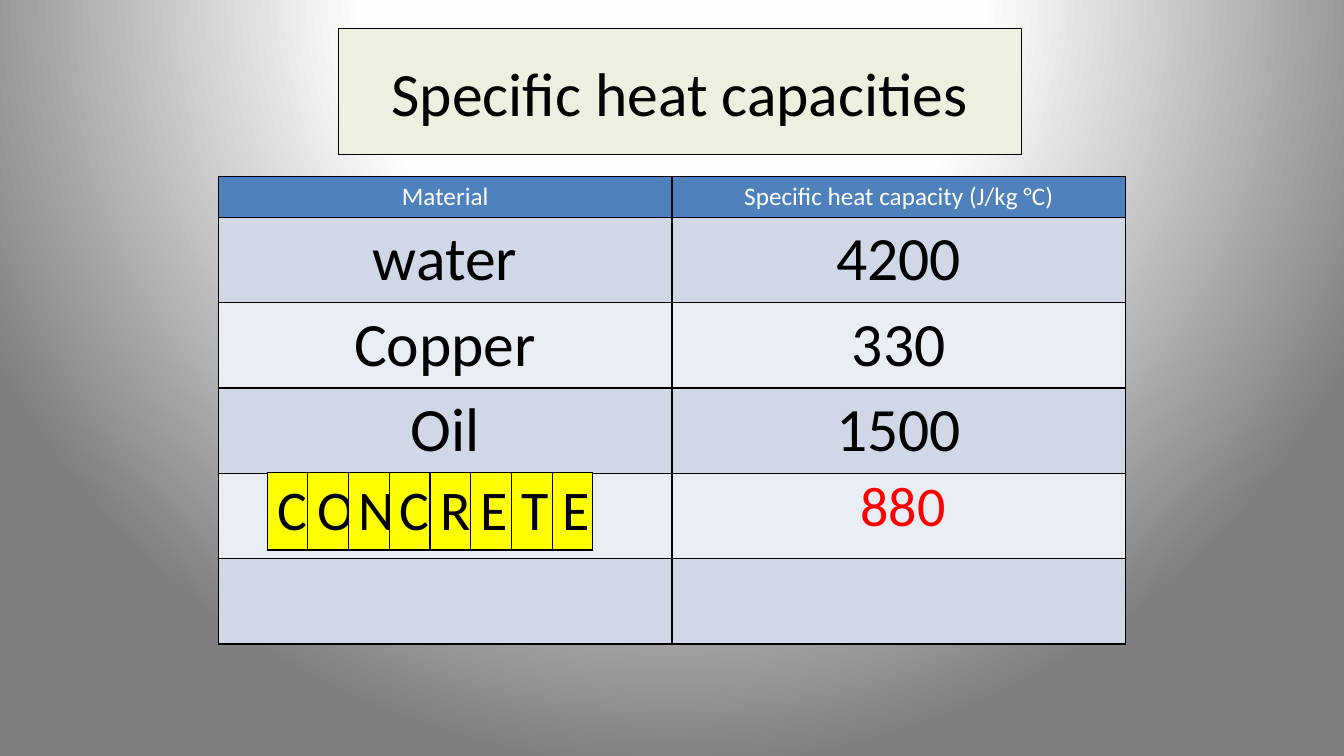
from pptx import Presentation
from pptx.dml.color import RGBColor
from pptx.enum.text import MSO_ANCHOR as Anchor, MSO_AUTO_SIZE as AutoSize, PP_ALIGN as Align
from pptx.oxml import parse_xml
from pptx.oxml.ns import nsdecls, qn
from pptx.util import Pt


def color(value):
    return RGBColor.from_string(value)


class SlideBuilder:
    """Holds the text style and the current slide, and adds its elements."""

    font = "Calibri"
    ink = "000000"

    def __init__(self, deck):
        self.page = deck.slides.add_slide(deck.slide_layouts[5])

    def background(self, stops, focus):
        self.page.background.fill.solid()
        properties = self.page.element.find(".//" + qn("p:bgPr"))
        stop_xml = "".join(
            f'<a:gs pos="{position * 1000}"><a:srgbClr val="{value}"/></a:gs>'
            for position, value in stops)
        edges = " ".join(f'{side}="{part * 1000}"' for side, part in zip("ltrb", focus))
        properties.replace(properties[0], parse_xml(
            f'<a:gradFill {nsdecls("a")} rotWithShape="1"><a:gsLst>{stop_xml}</a:gsLst>'
            f'<a:path path="circle"><a:fillToRect {edges}/></a:path></a:gradFill>'))

    def add_span(self, frame, text, size, ink):
        para = frame.paragraphs[0]
        para.alignment = Align.CENTER
        span = para.add_run()
        span.text = text
        for name, value in {"name": self.font, "size": Pt(size), "bold": False}.items():
            setattr(span.font, name, value)
        span.font.color.rgb = color(ink)

    def title(self, text, bounds, size, fill):
        box = self.page.shapes.title
        for name, value in zip(("left", "top", "width", "height"), bounds):
            setattr(box, name, Pt(value))
        box.fill.solid()
        box.fill.fore_color.rgb = color(fill)
        box.line.color.rgb = color(self.ink)
        box.line.width = Pt(0.75)
        box.text_frame.vertical_anchor = Anchor.MIDDLE
        self.add_span(box.text_frame, text, size, self.ink)

    def text(self, text, bounds, size, ink):
        frame = self.page.shapes.add_textbox(*map(Pt, bounds)).text_frame
        frame.word_wrap = True
        frame.auto_size = AutoSize.SHAPE_TO_FIT_TEXT
        self.add_span(frame, text, size, ink)

    def cell(self, cell, text, size, fill, ink):
        properties = cell._tc.get_or_add_tcPr()
        for side in "LRTB":
            properties.append(parse_xml(
                f'<a:ln{side} {nsdecls("a")} w="{Pt(1)}"><a:solidFill>'
                f'<a:srgbClr val="{self.ink}"/></a:solidFill></a:ln{side}>'))
        cell.fill.solid()
        cell.fill.fore_color.rgb = color(fill)
        if text:
            self.add_span(cell.text_frame, text, size, ink)

    def table(self, rows, bounds, heights, styles):
        table = self.page.shapes.add_table(len(rows), len(rows[0]), *map(Pt, bounds)).table
        table.first_row = table.horz_banding = False
        for row, texts, height, style in zip(table.rows, rows, heights, styles):
            row.height = Pt(height)
            for cell, text in zip(row.cells, texts):
                self.cell(cell, text, *style)


def main():
    deck = Presentation()
    deck.slide_width, deck.slide_height = Pt(960), Pt(540)
    slide = SlideBuilder(deck)
    slide.background([(0, "FFFFFF"), (40, "FEFEFE"), (100, "7F7F7F")], (50, -80, 50, 180))
    slide.title("Specific heat capacities", (242, 20.5, 487.5, 90), 44, "EBF1DE")

    materials = [
        ("Material", "Specific heat capacity (J/kg °C)"),
        ("water", "4200"),
        ("Copper", "330"),
        ("Oil", "1500"),
        ("", ""),
        ("", ""),
    ]
    header = (18, "4F81BD", "FFFFFF")
    dark, light = (44, "D0D8E8", slide.ink), (44, "E9EDF4", slide.ink)
    slide.table(materials, (156, 126, 648, 333.7), [29.2] + [60.9] * 5,
                [header, dark, light, dark, light, dark])
    slide.text("880", (591, 332.5, 108, 55.4), 40, "FF0000")
    slide.table(["CONCRETE"], (190.8, 337.5, 232.8, 55.4), [55.4],
                [(40, "FFFF00", slide.ink)])
    deck.save("out.pptx")


if __name__ == "__main__":
    main()
